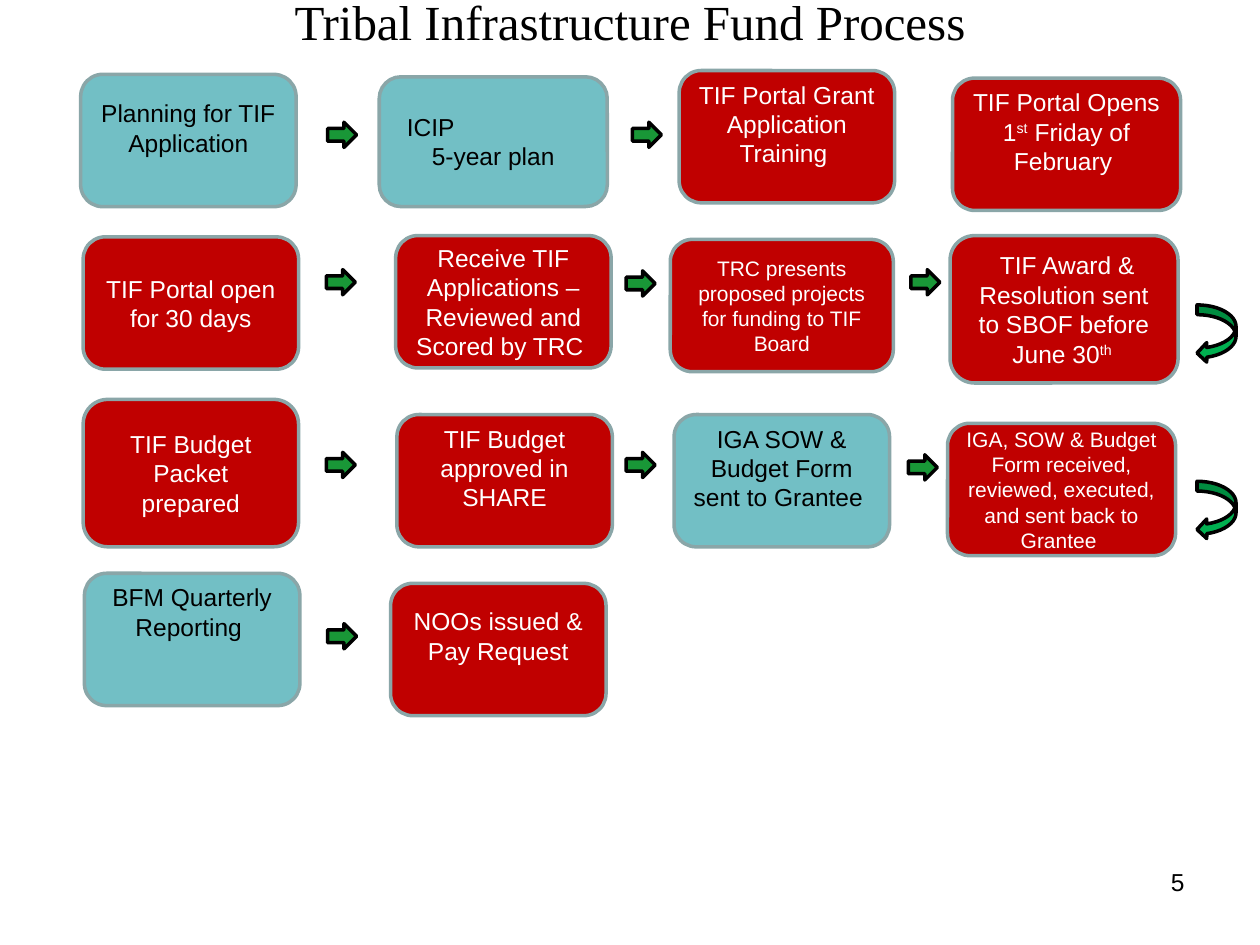
from dataclasses import dataclass

from pptx import Presentation
from pptx.dml.color import RGBColor as Rgb
from pptx.enum.shapes import MSO_SHAPE as Preset
from pptx.enum.text import MSO_ANCHOR as Anchor, PP_ALIGN as Align
from pptx.util import Inches, Pt


@dataclass(frozen=True)
class Theme:
    state: Rgb = Rgb(0xC0, 0x00, 0x00)    # steps done by the fund
    grantee: Rgb = Rgb(0x72, 0xBF, 0xC5)  # steps done by the grantee
    border: Rgb = Rgb(0x8A, 0xA6, 0xA8)
    arrow: Rgb = Rgb(0x19, 0x97, 0x37)
    turn: Rgb = Rgb(0x00, 0xB0, 0x50)
    dark: Rgb = Rgb(0x00, 0x00, 0x00)
    light: Rgb = Rgb(0xFF, 0xFF, 0xFF)
    title_font: str = "Times New Roman"
    body_font: str = "Arial"
    title_size: int = 28
    body_size: int = 14
    small_size: int = 12
    line_width: int = 2


THEME = Theme()
STATE, GRANTEE = THEME.state, THEME.grantee
BODY, SMALL = THEME.body_size, THEME.small_size
STEP_W, WIDE_W = 1.71, 1.81
STEP_H, TALL_H = 1.05, 1.17
MIDDLE = None  # no top inset: text is centred vertically

# left, top, width, height, fill, size, top inset, paragraphs (^ encloses superscript)
STEPS = [
    (0.64, 0.59, STEP_W, STEP_H, GRANTEE, BODY, 0.14, ["Planning for TIF Application"]),
    (3.01, 0.61, WIDE_W, 1.03, GRANTEE, BODY, 0.23, ["ICIP", "5-year plan"]),
    (5.39, 0.56, STEP_W, STEP_H, STATE, BODY, 0.02,
     ["TIF Portal Grant Application Training "]),
    (7.56, 0.62, WIDE_W, STEP_H, STATE, BODY, 0.02,
     ["TIF Portal Opens", "1^st^ Friday of February "]),

    (0.66, 1.88, STEP_W, STEP_H, STATE, BODY, MIDDLE, ["TIF Portal open for 30 days"]),
    (3.14, 1.87, STEP_W, STEP_H, STATE, BODY, MIDDLE,
     ["Receive TIF Applications – Reviewed and Scored by TRC "]),
    (5.32, 1.90, 1.77, STEP_H, STATE, SMALL, MIDDLE,
     ["TRC presents proposed projects for funding to TIF Board"]),
    (7.54, 1.87, WIDE_W, TALL_H, STATE, BODY, MIDDLE,
     [" TIF Award & Resolution sent to SBOF before June 30^th ^"]),

    (0.66, 3.17, STEP_W, TALL_H, STATE, BODY, MIDDLE, ["TIF Budget Packet prepared"]),
    (3.15, 3.29, STEP_W, STEP_H, STATE, BODY, 0.02, ["TIF Budget approved in SHARE"]),
    (5.35, 3.29, STEP_W, STEP_H, GRANTEE, BODY, 0.02,
     ["IGA SOW & Budget Form sent to Grantee "]),
    (7.52, 3.36, WIDE_W, STEP_H, STATE, SMALL, MIDDLE,
     ["IGA, SOW & Budget Form received, reviewed, executed, and sent back to Grantee "]),

    (0.67, 4.55, STEP_W, STEP_H, GRANTEE, BODY, 0.02, ["BFM Quarterly Reporting "]),
    (3.10, 4.63, STEP_W, STEP_H, STATE, BODY, 0.13, ["NOOs issued & Pay Request"]),
]
ARROWS = [
    (2.60, 0.97), (5.02, 0.97),
    (2.59, 2.14), (4.97, 2.15), (7.23, 2.14),
    (2.59, 3.59), (4.97, 3.59), (7.21, 3.61),
    (2.60, 4.95),
]
TURN_TOPS = [2.42, 3.82]


def apply(target, settings):
    for name, value in settings.items():
        setattr(target, name, value)


def write(paragraph, text, size, color, font=THEME.body_font, align=Align.CENTER):
    paragraph.alignment = align
    for index, part in enumerate(text.split("^")):
        if not part:
            continue
        run = paragraph.add_run()
        run.text = part
        apply(run.font, {"size": Pt(size), "name": font})
        run.font.color.rgb = color
        if index % 2:
            run.font._element.set("baseline", "30000")


def add_preset(slide, preset, box, fill, line):
    shape = slide.shapes.add_shape(preset, *map(Inches, box))
    shape.shadow.inherit = False
    shape.fill.solid()
    shape.fill.fore_color.rgb = fill
    shape.line.color.rgb = line
    shape.line.width = Pt(THEME.line_width)
    return shape


def add_step(slide, left, top, width, height, fill, size, inset, paragraphs):
    step = add_preset(slide, Preset.ROUNDED_RECTANGLE,
                      (left, top, width, height), fill, THEME.border)
    frame = step.text_frame
    apply(frame, {
        "word_wrap": True,
        "vertical_anchor": Anchor.MIDDLE if inset is MIDDLE else Anchor.TOP,
        "margin_top": Inches(0.05 if inset is MIDDLE else inset),
    })
    color = THEME.dark if fill == GRANTEE else THEME.light
    for index, text in enumerate(paragraphs):
        paragraph = frame.add_paragraph() if index else frame.paragraphs[0]
        write(paragraph, text, size, color)
    return frame


def add_label(slide, box, text, top_inset=0.05, **style):
    frame = slide.shapes.add_textbox(*map(Inches, box)).text_frame
    apply(frame, {"word_wrap": True, "margin_top": Inches(top_inset)})
    write(frame.paragraphs[0], text, color=THEME.dark, **style)


def main():
    deck = Presentation()
    apply(deck, {"slide_width": Inches(10), "slide_height": Inches(7.5)})
    slide = deck.slides.add_slide(deck.slide_layouts[6])

    # Process steps
    for step in STEPS:
        frame = add_step(slide, *step)
        if step[-1][0] == "ICIP":  # heading sits at the left, above its plan
            heading = frame.paragraphs[0]
            heading.alignment = Align.LEFT
            heading._p.get_or_add_pPr().set("marL", str(Inches(0.07)))

    # Title
    add_label(slide, (0.5, -0.17, 9, 0.77), "Tribal Infrastructure Fund Process",
              top_inset=0.1, size=THEME.title_size, font=THEME.title_font)

    # Arrows along the rows, and turns to the next row
    for left, top in ARROWS:
        add_preset(slide, Preset.RIGHT_ARROW, (left, top, 0.23, 0.2),
                   THEME.arrow, THEME.dark)
    for top in TURN_TOPS:
        add_preset(slide, Preset.CURVED_LEFT_ARROW, (9.5, top, 0.31, 0.46),
                   THEME.turn, THEME.dark)

    # Page number
    add_label(slide, (7.17, 6.83, 2.33, 0.52), "5", size=BODY, align=Align.RIGHT)

    deck.save("out.pptx")


if __name__ == "__main__":
    main()
